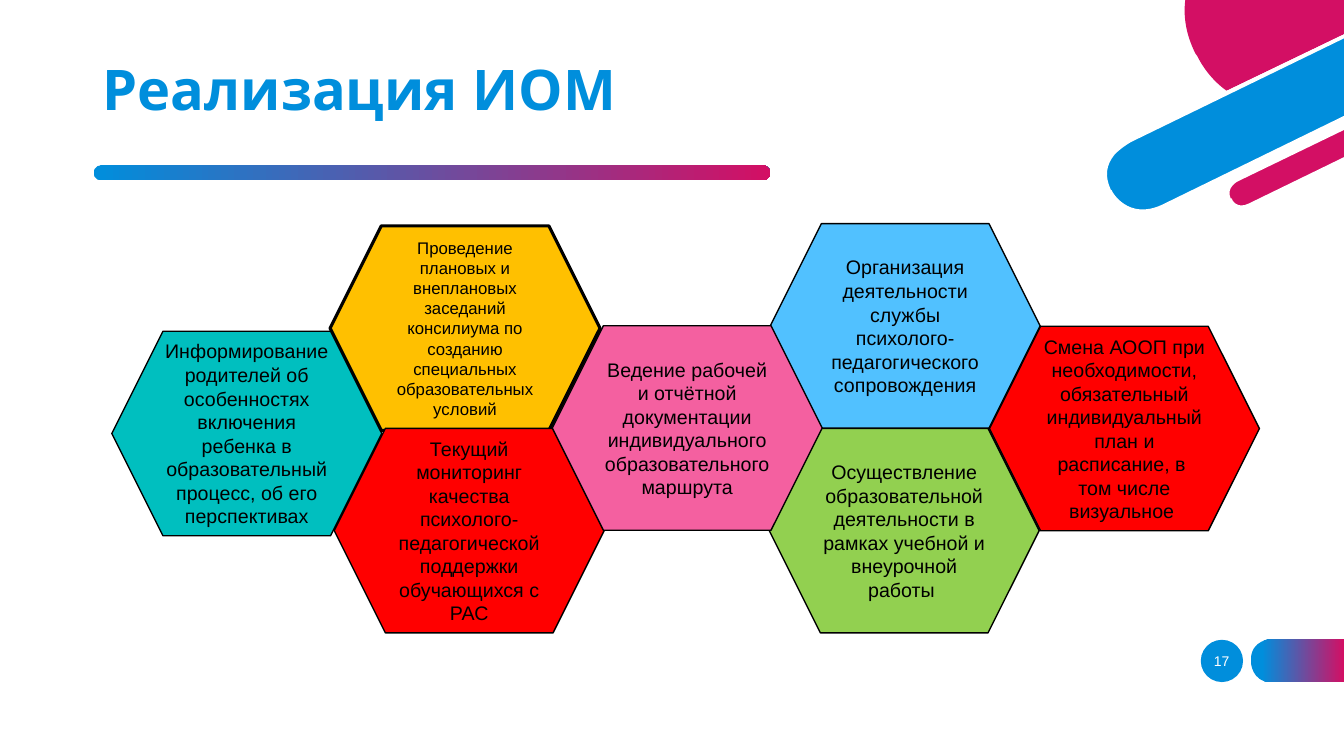
from dataclasses import dataclass
from typing import Any

from lxml import etree
from pptx import Presentation
from pptx import util as u
from pptx.dml.color import RGBColor
from pptx.enum import shapes, text
from pptx.oxml import ns


@dataclass(frozen=True)
class Theme:
    blue: str = "008EDC"
    rose: str = "D30F64"
    white: str = "FFFFFF"
    black: str = "000000"
    font: str = "Arial"
    head: str = "League Spartan"
    big: float = 40
    mid: float = 14
    low: float = 12
    tiny: float = 10


@dataclass(frozen=True)
class Cell:
    left: float
    top: float
    fill: str
    words: str
    size: float = Theme.mid
    edge: float = 1


@dataclass(frozen=True)
class Blob:
    fill: str
    steps: list[tuple[float, ...]]


THEME = Theme()
WIDE, HIGH = 960, 540
CELL_W, CELL_H = 192.8, 146.1

BLOBS = [
    Blob(THEME.white, [
        (959.8, 58.3), (940.3, 67.7), (917.3, 79.2, 895.7, 77.8, 877.7, 64.1),
        (863.3, 53.3, 856.1, 39.6, 856.1, 39.6), (855.4, 37.4),
        (848.9, 24.5, 846, 11.5, 848.2, 0), (845.3, 0),
        (843.1, 12.2, 846, 25.2, 852.5, 38.9), (853.9, 41),
        (853.9, 41.8, 861.1, 55.4, 875.5, 66.2),
        (884.2, 72.7, 895.7, 78.5, 910.8, 78.5),
        (919.4, 78.5, 929.5, 76.3, 941.8, 70.6), (959.8, 61.9)]),
    Blob(THEME.blue, [
        (807.1, 100.1), (807.1, 100.1, 781.2, 113, 792.7, 136.1), (792.7, 136.8),
        (792.7, 136.8, 804.2, 159.8, 830.9, 146.9), (960, 84.2), (960, 25.9)]),
    Blob(THEME.rose, [
        (855.4, 40.3), (855.4, 40.3, 861.8, 54.7, 876.2, 64.8), (960, 24.5),
        (960, 0), (846.7, 0), (845.3, 10.8, 846.7, 23.8, 853.9, 38.2)]),
    Blob(THEME.rose, [
        (960, 90.7), (883.4, 128.2), (883.4, 128.2, 873.4, 133.2, 878.4, 141.8),
        (878.4, 142.6), (878.4, 142.6, 882.7, 151.9, 892.8, 146.9), (960, 113.8)]),
    Blob(THEME.white, [
        (892.1, 145.4), (883.4, 149.8, 879.8, 142.6, 879.8, 141.8), (879.1, 141.8),
        (875.5, 133.9, 884.2, 129.6, 884.2, 129.6), (960, 92.9), (960, 89.3),
        (882.7, 126.7), (882.7, 126.7, 877.7, 129.6, 876.2, 134.6),
        (874.8, 137.5, 875.5, 140.4, 877, 143.3),
        (878.4, 146.2, 882, 149.8, 887, 149.8),
        (889.2, 149.8, 891.4, 149.8, 893.5, 148.3), (960, 115.9), (960, 112.3)]),
    Blob(THEME.white, [
        (830.2, 146.2), (805.7, 157.7, 794.2, 136.8, 794.2, 136.1), (793.4, 135.4),
        (789.1, 126, 789.8, 118.1, 796.3, 110.2),
        (801.4, 105.1, 807.8, 101.5, 807.8, 101.5), (960, 27.4), (960, 24.5),
        (806.4, 98.6), (805.7, 99.4, 793.4, 105.1, 789.1, 117.4),
        (787, 123.1, 787.7, 129.6, 791.3, 136.8), (791.3, 137.5),
        (791.3, 137.5, 799.2, 152.6, 815.8, 152.6),
        (820.1, 152.6, 824.4, 151.2, 830.9, 148.3), (960, 85.7), (960, 82.8)]),
]

TAIL = [
    (908.6, 487.4), (960, 487.4), (960, 456.5), (908.6, 456.5),
    (908.6, 456.5, 893.5, 456.5, 893.5, 471.6), (893.5, 472.3),
    (893.5, 472.3, 893.5, 487.4, 908.6, 487.4)]

CELLS = [
    Cell(235.8, 161.4, "FFC000", "Проведение плановых и внеплановых заседаний консилиума "
         "по созданию специальных образовательных условий", THEME.low, 2.25),
    Cell(549.5, 306, "92D050", "Осуществление образовательной деятельности в рамках "
         "учебной и внеурочной работы "),
    Cell(550.2, 159.8, "51C1FF", "Организация деятельности службы "
         "психолого-педагогического сопровождения"),
    Cell(238.8, 306, "FF0000", "Текущий мониторинг качества психолого-педагогической "
         "поддержки обучающихся с РАС"),
    Cell(394.5, 232.7, "F460A0", "Ведение рабочей и отчётной документации "
         "индивидуального образовательного маршрута"),
    Cell(79.9, 236.6, "00BFBF", "Информирование родителей об особенностях включения "
         "ребенка в образовательный процесс, об его перспективах"),
    Cell(706.8, 233.1, "FF0000", "Смена АООП при необходимости, обязательный "
         "индивидуальный план и расписание, в  том числе визуальное "),
]


def assign(item: Any, form: dict[str, Any]) -> None:
    for key, value in form.items():
        setattr(item, key, value)


def box(*sides: float) -> list[int]:
    return [u.Pt(side) for side in sides]


def paint(shape: Any, fill: str) -> None:
    shape.shadow.inherit = False
    shape.line.fill.background()
    shape.fill.solid()
    shape.fill.fore_color.rgb = RGBColor.from_string(fill)


def blend(shape: Any, start: float) -> None:
    paint(shape, THEME.blue)
    shape.fill.gradient()
    shape.fill.gradient_angle = 0
    stops = zip(shape.fill.gradient_stops, (start, 1), (THEME.blue, THEME.rose))
    for stop, place, tint in stops:
        stop.position = place
        stop.color.rgb = RGBColor.from_string(tint)


def write(shape: Any, words: str, font: dict[str, Any], tint: str,
          lay: dict[str, Any]) -> None:
    frame = shape.text_frame
    assign(frame, {"text": words, "word_wrap": True, "auto_size": text.MSO_AUTO_SIZE.NONE,
                   "vertical_anchor": text.MSO_ANCHOR.MIDDLE})
    para = frame.paragraphs[0]
    assign(para, lay)
    assign(para.runs[0].font, font)
    para.runs[0].font.color.rgb = RGBColor.from_string(tint)


def carve(slide: Any, steps: list[tuple[float, ...]]) -> Any:
    dots = [tuple(box(*step[i:i + 2])) for step in steps for i in range(0, len(step), 2)]
    pen = slide.shapes.build_freeform(*dots[0])
    pen.add_line_segments(dots[1:], close=True)
    shape = pen.convert_to_shape()
    lines = iter(list(shape.element.iter(ns.qn("a:lnTo"))))
    for step in steps[1:]:
        group = [next(lines) for _ in range(len(step) // 2)]
        if len(group) == 3:
            curve = etree.Element(ns.qn("a:cubicBezTo"))
            group[0].addprevious(curve)
            for line in group:
                curve.append(line[0])
                line.getparent().remove(line)
    return shape


def draw_cell(slide: Any, cell: Cell) -> None:
    shape = slide.shapes.add_shape(shapes.MSO_SHAPE.HEXAGON,
                                   *box(cell.left, cell.top, CELL_W, CELL_H))
    paint(shape, cell.fill)
    shape.line.color.rgb = RGBColor.from_string(THEME.black)
    shape.line.width = u.Pt(cell.edge)
    write(shape, cell.words, {"name": THEME.font, "size": u.Pt(cell.size)},
          THEME.black, {"alignment": text.PP_ALIGN.CENTER})


def main() -> None:
    deck = Presentation()
    assign(deck, {"slide_width": u.Pt(WIDE), "slide_height": u.Pt(HIGH)})
    slide = deck.slides.add_slide(deck.slide_layouts[5])

    disc = slide.shapes.add_shape(shapes.MSO_SHAPE.OVAL, *box(857.7, 457, 30.2, 30.2))
    paint(disc, THEME.blue)
    blend(carve(slide, TAIL), 0.12)
    for blob in BLOBS:
        paint(carve(slide, blob.steps), blob.fill)
    rule = slide.shapes.add_shape(shapes.MSO_SHAPE.ROUNDED_RECTANGLE,
                                  *box(66.8, 118, 483.4, 10.9))
    rule.adjustments[0] = 0.5
    blend(rule, 0)

    page = slide.shapes.add_textbox(*box(851, 457.9, 43.2, 28.8))
    write(page, "17", {"name": THEME.font, "size": u.Pt(THEME.tiny)},
          THEME.white, {"alignment": text.PP_ALIGN.CENTER})

    title = slide.shapes.title
    assign(title, dict(zip(("left", "top", "width", "height"),
                           box(66.2, 28.8, 712.8, 74.2))))
    write(title, "Реализация ИОМ",
          {"name": THEME.head, "size": u.Pt(THEME.big), "bold": True},
          THEME.blue, {"alignment": text.PP_ALIGN.LEFT, "line_spacing": 0.9})

    for cell in CELLS:
        draw_cell(slide, cell)
    deck.save("out.pptx")


if __name__ == "__main__":
    main()
